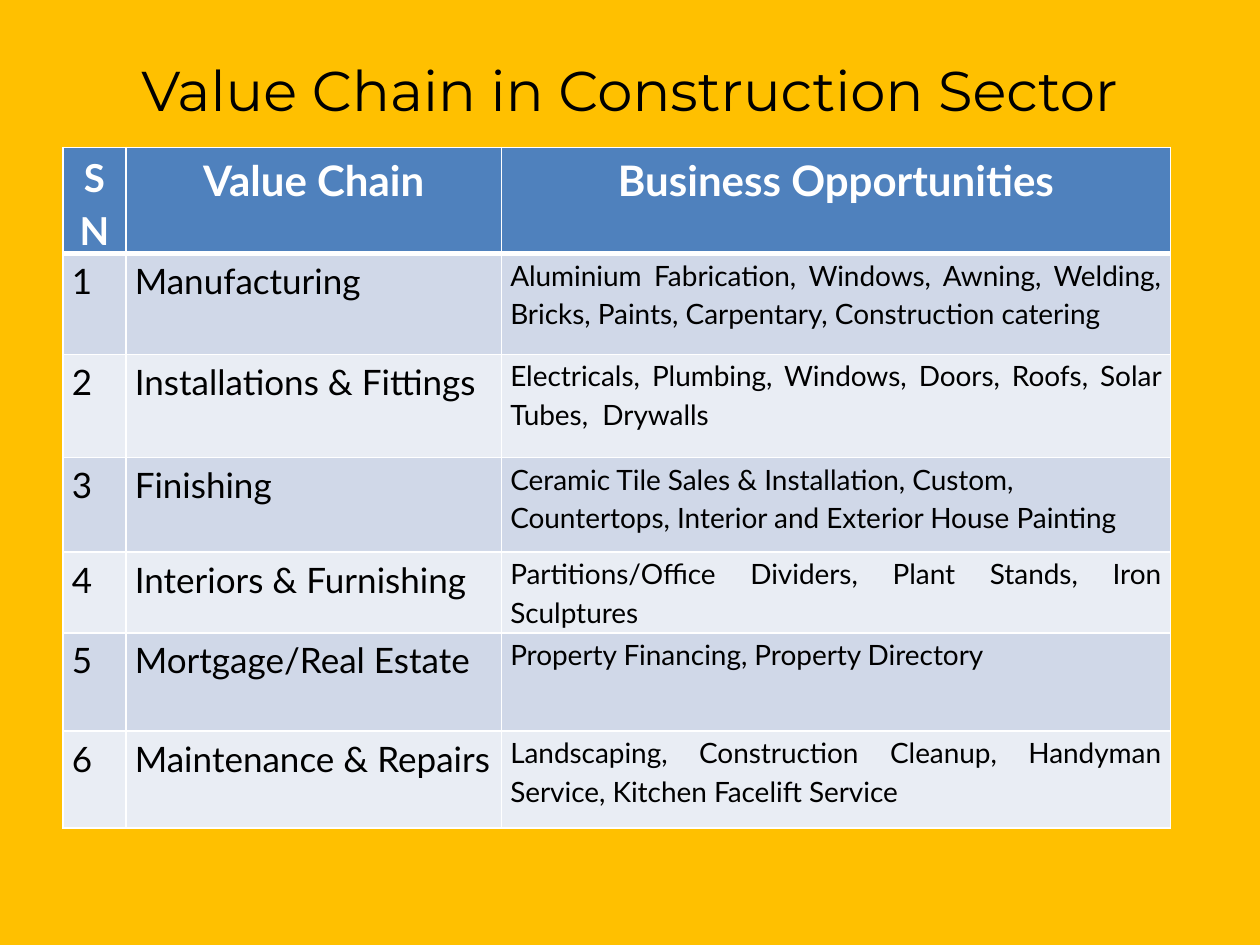
from lxml import etree
from pptx import Presentation
from pptx.dml.color import RGBColor
from pptx.enum.text import MSO_ANCHOR, PP_ALIGN as Align
from pptx.oxml.ns import qn
from pptx.util import Inches, Pt

COLORS = {
    "background": "FFC000",
    "text": "000000",
    "header": "4F81BD",
    "header_text": "FFFFFF",
    "odd_row": "D0D8E8",
    "even_row": "E9EDF4",
    "border": "FFFFFF",
}
HEADINGS = ("SN", "Value Chain", "Business Opportunities")
SECTORS = [
    ("Manufacturing", "Aluminium Fabrication, Windows, Awning, Welding, Bricks, "
     "Paints, Carpentary, Construction catering"),
    ("Installations & Fittings", "Electricals, Plumbing, Windows, Doors, Roofs, "
     "Solar Tubes,  Drywalls"),
    ("Finishing", "Ceramic Tile Sales & Installation, Custom, Countertops, "
     "Interior and Exterior House Painting"),
    ("Interiors & Furnishing", "Partitions/Office Dividers, Plant Stands, Iron Sculptures"),
    ("Mortgage/Real Estate", "Property Financing, Property Directory"),
    ("Maintenance & Repairs", "Landscaping, Construction Cleanup, Handyman Service, "
     "Kitchen Facelift Service"),
]
COLUMN_WIDTHS = (0.5, 2.98, 5.31)
ROW_HEIGHTS = (0.7, 0.8, 0.82, 0.75, 0.64, 0.78, 0.77)
HEADER_SIZES = (22, 24, 24)
BODY_SIZES = (20, 20, 16)
BODY_ALIGNMENTS = (Align.JUSTIFY, Align.LEFT, Align.JUSTIFY)


def style_text(paragraph, font_name, size, color, alignment, bold=False):
    paragraph.alignment = alignment
    for run in paragraph.runs:
        run.font.name = font_name
        run.font.size = Pt(size)
        run.font.bold = bold
        run.font.color.rgb = RGBColor.from_string(COLORS[color])


def add_borders(cell, bottom_width, top_width):
    """Put the border lines ahead of the fill, as the schema requires."""
    properties = cell._tc.get_or_add_tcPr()
    widths = {"a:lnL": 1, "a:lnR": 1, "a:lnT": top_width, "a:lnB": bottom_width}
    for position, (tag, width) in enumerate(widths.items()):
        line = etree.Element(qn(tag), w=str(Pt(width)))
        fill = etree.SubElement(line, qn("a:solidFill"))
        etree.SubElement(fill, qn("a:srgbClr"), val=COLORS["border"])
        properties.insert(position, line)


prs = Presentation()
prs.slide_width, prs.slide_height = Inches(10), Inches(7.5)
slide = prs.slides.add_slide(prs.slide_layouts[5])
slide.background.fill.solid()
slide.background.fill.fore_color.rgb = RGBColor.from_string(COLORS["background"])

title = slide.shapes.title
title.left, title.top = Inches(0.5), Inches(0.08)
title.width, title.height = Inches(9), Inches(1.25)
title.text_frame.text = "Value Chain in Construction Sector"
title.text_frame.vertical_anchor = MSO_ANCHOR.MIDDLE
style_text(title.text_frame.paragraphs[0], "Montserrat", 32, "text", Align.CENTER)

rows = [HEADINGS] + [(str(number), *sector) for number, sector in enumerate(SECTORS, 1)]
value_chain = slide.shapes.add_table(
    len(rows), len(HEADINGS), Inches(0.5), Inches(1.17),
    Inches(sum(COLUMN_WIDTHS)), Inches(sum(ROW_HEIGHTS))).table
for column, width in zip(value_chain.columns, COLUMN_WIDTHS):
    column.width = Inches(width)

for r, entries in enumerate(rows):
    value_chain.rows[r].height = Inches(ROW_HEIGHTS[r])
    is_header = r == 0
    row_fill = "header" if is_header else "odd_row" if r % 2 else "even_row"
    for c, entry in enumerate(entries):
        cell = value_chain.cell(r, c)
        cell.margin_left = cell.margin_right = Inches(0.07)
        cell.margin_top = cell.margin_bottom = 0
        cell.fill.solid()
        cell.fill.fore_color.rgb = RGBColor.from_string(COLORS[row_fill])
        add_borders(cell, bottom_width=3 if is_header else 1, top_width=3 if r == 1 else 1)
        cell.text_frame.text = entry
        paragraph = cell.text_frame.paragraphs[0]
        paragraph.line_spacing = 1.15
        if is_header:
            style_text(paragraph, "Lato", HEADER_SIZES[c], "header_text", Align.CENTER, bold=True)
        else:
            left_aligned = entries[1] == "Finishing"
            alignment = Align.LEFT if left_aligned and c == 2 else BODY_ALIGNMENTS[c]
            style_text(paragraph, "Lato", BODY_SIZES[c], "text", alignment)

prs.save("out.pptx")
